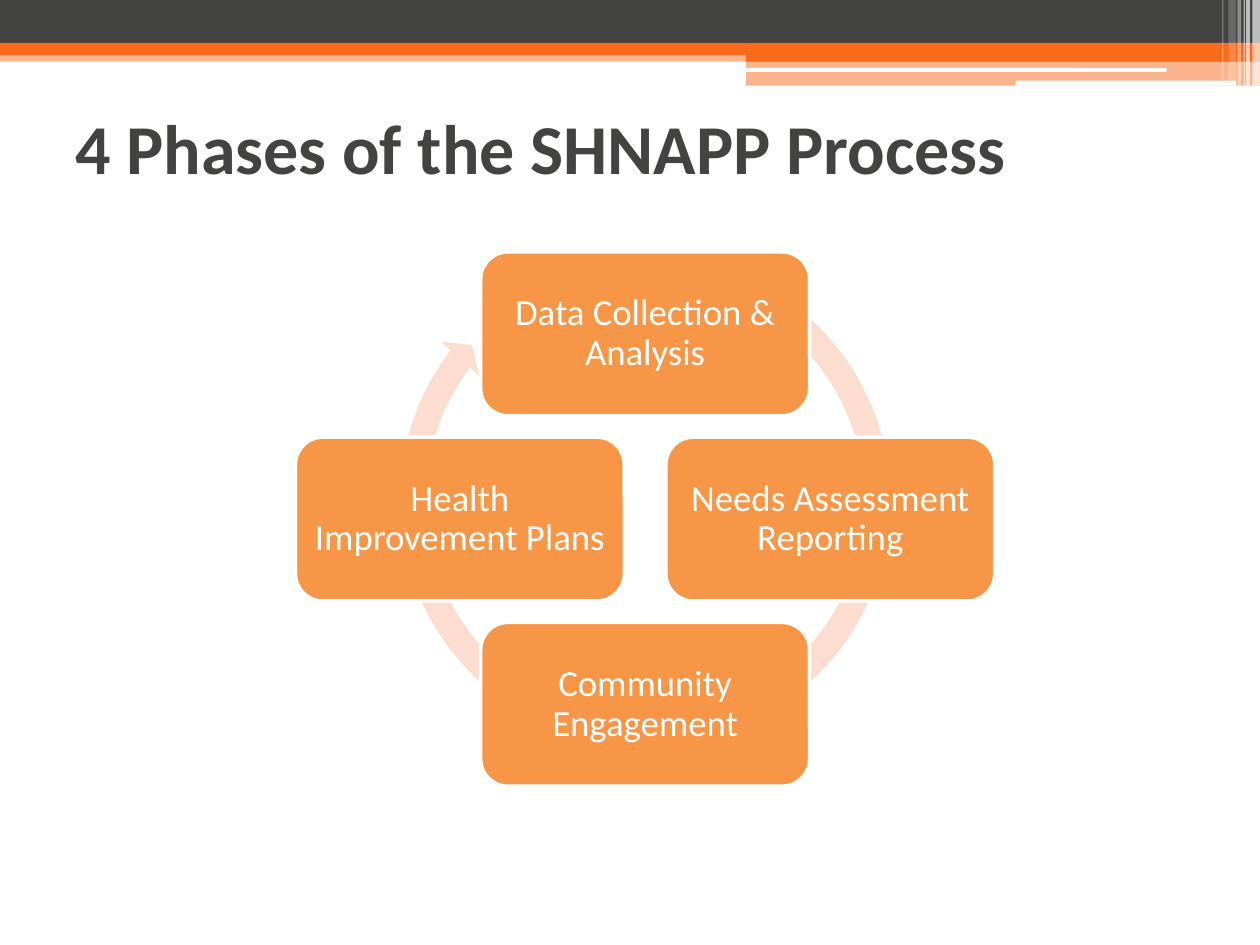
from dataclasses import dataclass

from lxml.etree import SubElement
from pptx import Presentation
from pptx.dml.color import RGBColor
from pptx.enum.shapes import MSO_SHAPE
from pptx.enum.text import MSO_ANCHOR, PP_ALIGN
from pptx.oxml.ns import qn
from pptx.util import Inches, Pt


@dataclass(frozen=True)
class Theme:
    font: str = "Calibri"
    dark: str = "434342"
    accent: str = "F96A1B"
    card: str = "F79646"
    ring: str = "FCDDCF"
    white: str = "FFFFFF"
    title_size: int = 40
    card_size: int = 21


theme = Theme()
WIDTH, HEIGHT = 10, 7.5

deck = Presentation()
deck.slide_width, deck.slide_height = Inches(WIDTH), Inches(HEIGHT)
slide = deck.slides.add_slide(deck.slide_layouts[6])


def add_block(kind, left, top, width, height, color, opacity=100):
    block = slide.shapes.add_shape(
        kind, Inches(left), Inches(top), Inches(width), Inches(height))
    block.shadow.inherit = False
    block.fill.solid()
    block.fill.fore_color.rgb = RGBColor.from_string(color)
    block.line.fill.background()
    if opacity < 100:
        tint = block.fill._xPr.find(qn("a:solidFill"))[0]
        SubElement(tint, qn("a:alpha"), val=str(opacity * 1000))
    return block


def write(frame, words, size, color, bold=False):
    frame.word_wrap = True
    frame.vertical_anchor = MSO_ANCHOR.MIDDLE
    paragraph = frame.paragraphs[0]
    run = paragraph.add_run()
    run.text = words
    run.font.name, run.font.size, run.font.bold = theme.font, Pt(size), bold
    run.font.color.rgb = RGBColor.from_string(color)
    return paragraph


# Header bands: left, top, width, height, colour, opacity
half = 5.92
for band in [
    (0, 0.4, WIDTH, 0.09, theme.accent, 50),
    (0, 0, WIDTH, 0.34, theme.dark),
    (0, 0.34, WIDTH, 0.1, theme.accent),
    (half, 0.39, WIDTH - half, 0.1, theme.accent),
    (half, 0.48, WIDTH - half, 0.2, theme.accent, 50),
]:
    add_block(MSO_SHAPE.RECTANGLE, *band)

# White slits in the header
for slit in [(5.91, 0.54, 3.35, 0.03), (8.06, 0.64, 1.75, 0.04)]:
    add_block(MSO_SHAPE.ROUNDED_RECTANGLE, *slit, theme.white)

# Translucent stripes at the right edge: left, width, height, opacity
for left, width, height, opacity in [
    (9.94, 0.06, 0.68, 65),
    (9.89, 0.03, 0.68, 65),
    (9.87, 0.01, 0.68, 60),
    (9.82, 0.03, 0.68, 40),
    (9.75, 0.06, 0.64, 20),
    (9.7, 0.01, 0.64, 30),
]:
    add_block(MSO_SHAPE.RECTANGLE, left, 0, width, height, theme.white, opacity)

# Title
title = slide.shapes.add_textbox(
    Inches(0.05 * WIDTH), Inches(0.58), Inches(0.9 * WIDTH), Inches(1.17))
write(title.text_frame, "4 Phases of the SHNAPP Process",
      theme.title_size, theme.dark, bold=True)

# Cycle arrow behind the phases
ring = add_block(MSO_SHAPE.CIRCULAR_ARROW, 3.07, 1.92, 4.1, 4.1, theme.ring)
for index, value in enumerate([0.05, 2.73, 130.41, 178.9, 0.05]):
    ring.adjustments[index] = value

# Phase cards, clockwise from the top, one step from the centre
center_x, center_y, step = 5.12, 4.12, 1.47
card_width, card_height = 2.61, 1.3
for phase, across, down in [
    ("Data Collection & Analysis", 0, -1),
    ("Needs Assessment Reporting", 1, 0),
    ("Community Engagement", 0, 1),
    ("Health Improvement Plans", -1, 0),
]:
    card = add_block(
        MSO_SHAPE.ROUNDED_RECTANGLE,
        center_x + across * step - card_width / 2,
        center_y + down * step - card_height / 2,
        card_width, card_height, theme.card)
    card.line.color.rgb = RGBColor.from_string(theme.white)
    card.line.width = Pt(2)
    frame = card.text_frame
    frame.margin_left = frame.margin_right = Inches(0.09)
    frame.margin_top = frame.margin_bottom = Inches(0.09)
    label = write(frame, phase, theme.card_size, theme.white)
    label.alignment = PP_ALIGN.CENTER
    label.line_spacing = 0.9

deck.save("out.pptx")
